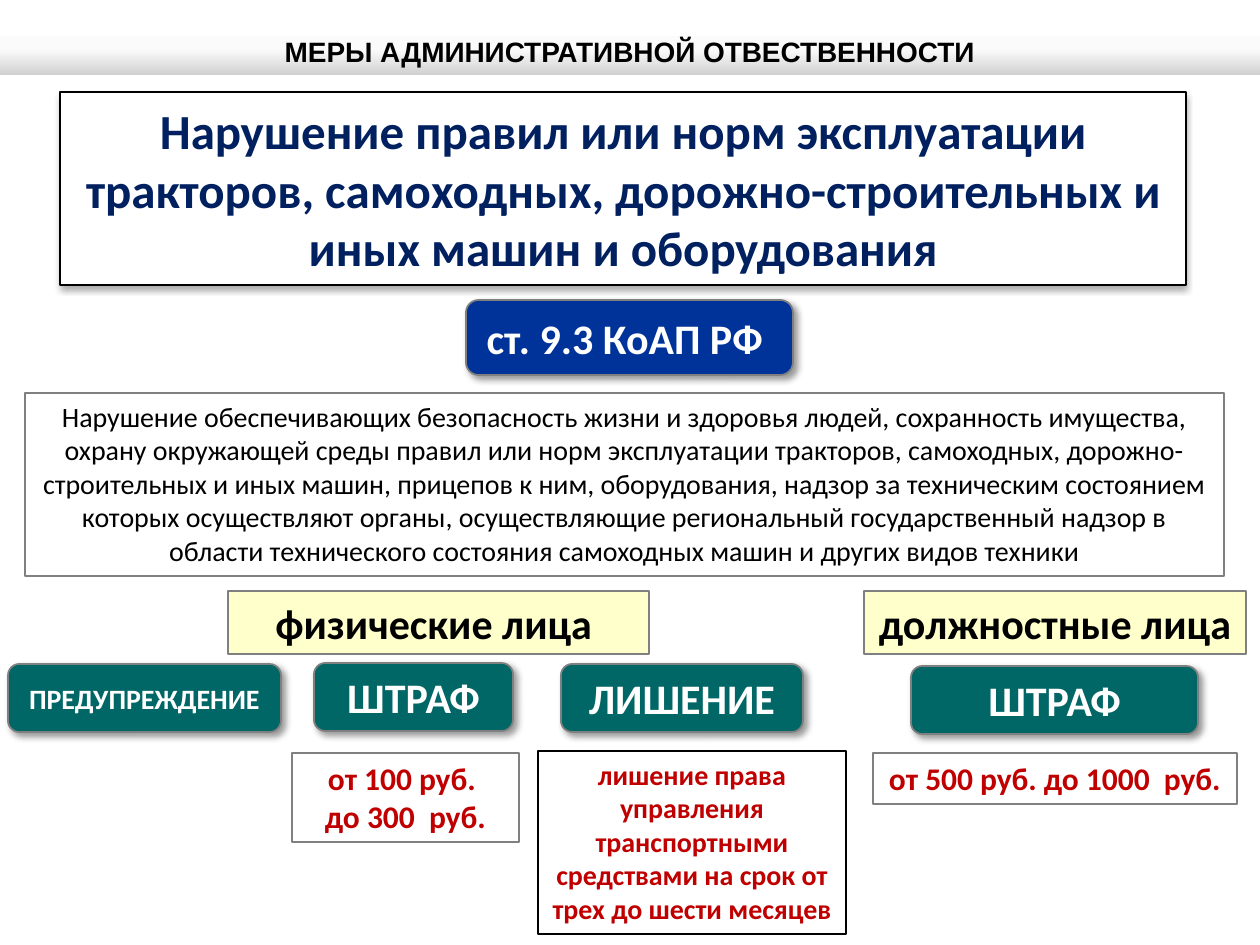
from lxml import etree
from pptx import Presentation
from pptx import util as u
from pptx.dml.color import RGBColor
from pptx.enum import shapes, text
from pptx.oxml import parse_xml

PX = 914400 / 126
NS = 'xmlns:a="http://schemas.openxmlformats.org/drawingml/2006/main"'

# Kinds of box: look and text format
BUTTON = dict(rounded=True, line="808080", line_pt=1, size=24, bold=True, color="FFFFFF",
              middle=True, shadow=(40, 4, 3, 45))
GREEN = BUTTON | dict(fill="006666")
WHO = dict(fill="FFFFCC", line="808080", size=24, bold=True)
PENALTY = dict(line="808080", size=18, bold=True, color="C00000")
BAR = dict(gradient=((0, "FFFFFF"), (50, "FBFBFB"), (100, "D1D1D1")), size=16, bold=True,
           font="Arial", spacing=1.15)
OFFENCE = dict(fill="FFFFFF", line="000000", size=28, bold=True, color="002060", middle=True,
               margins=(0, 8), shadow=(32, 3.5, 2.2, 90))
ARTICLE = BUTTON | dict(fill="003399")
DETAIL = dict(fill="FFFFFF", line="808080", size=16)

# (left, top, width, height) in px, kind, paragraphs
BOXES = [
    ((0, 23, 1260, 52), BAR, ["МЕРЫ АДМИНИСТРАТИВНОЙ ОТВЕСТВЕННОСТИ"]),
    ((60, 92, 1126, 193), OFFENCE,
     ["Нарушение правил или норм эксплуатации тракторов, самоходных, "
      "дорожно-строительных и иных машин и оборудования"]),
    ((466, 300, 327, 75), ARTICLE, ["ст. 9.3 КоАП РФ "]),
    ((25, 393, 1199, 183), DETAIL,
     ["Нарушение обеспечивающих безопасность жизни и здоровья людей, сохранность "
      "имущества, охрану окружающей среды правил или норм эксплуатации тракторов, "
      "самоходных, дорожно-строительных и иных машин, прицепов к ним, оборудования, "
      "надзор за техническим состоянием которых осуществляют органы, осуществляющие "
      "региональный государственный надзор в области технического состояния "
      "самоходных машин и других видов техники"]),
    # Persons
    ((228, 591, 421, 63), WHO, ["физические лица "]),
    ((864, 591, 382, 63), WHO, ["должностные лица "]),
    # Measures
    ((8, 664, 273, 68), GREEN | dict(size=16), ["ПРЕДУПРЕЖДЕНИЕ"]),
    ((314, 663, 199, 68), GREEN, ["ШТРАФ"]),
    ((561, 664, 242, 68), GREEN, ["ЛИШЕНИЕ"]),
    ((911, 666, 287, 68), GREEN, ["ШТРАФ"]),
    # Penalties
    ((292, 753, 227, 89), PENALTY, ["от 100 руб. ", "до 300  руб."]),
    ((538, 751, 308, 183), PENALTY | dict(line="000000", size=16),
     ["лишение права управления транспортными средствами на срок от трех до шести месяцев"]),
    ((873, 753, 364, 51), PENALTY, ["от 500 руб. до 1000  руб."]),
]


def rgb(value):
    return RGBColor.from_string(value)


def px(n):
    return u.Emu(round(n * PX))


def set_gradient(sp, stops):
    sp.fill.gradient()
    sp.fill.gradient_angle = 270
    gs_list = sp.fill._fill._gradFill.find("{*}gsLst")
    for gs in list(gs_list):
        gs_list.remove(gs)
    for pos, color in stops:
        gs_list.append(parse_xml(
            f'<a:gs {NS} pos="{pos * 1000}"><a:srgbClr val="{color}"/></a:gs>'))


def set_shadow(sp, alpha, blur, dist, angle):
    effects = sp._element.spPr.find("{*}effectLst")
    effects.append(etree.fromstring(
        f'<a:outerShdw {NS} blurRad="{u.Pt(blur)}" dist="{u.Pt(dist)}" '
        f'dir="{angle * 60000}" algn="tl" rotWithShape="0">'
        f'<a:srgbClr val="000000"><a:alpha val="{alpha * 1000}"/></a:srgbClr></a:outerShdw>'))


def add_box(s, place, look, paragraphs):
    kind = shapes.MSO_SHAPE.ROUNDED_RECTANGLE if look.get("rounded") else shapes.MSO_SHAPE.RECTANGLE
    sp = s.shapes.add_shape(kind, *map(px, place))
    sp.shadow.inherit = False

    # Fill, line and shadow
    if "gradient" in look:
        set_gradient(sp, look["gradient"])
    elif "fill" in look:
        sp.fill.solid()
        sp.fill.fore_color.rgb = rgb(look["fill"])
    else:
        sp.fill.background()
    if "line" in look:
        sp.line.color.rgb = rgb(look["line"])
        sp.line.width = u.Pt(look.get("line_pt", 0.75))
    else:
        sp.line.fill.background()
    if "shadow" in look:
        set_shadow(sp, *look["shadow"])

    # Text
    tf = sp.text_frame
    side, end = map(px, look.get("margins", (12.6, 6.3)))
    anchor = text.MSO_ANCHOR.MIDDLE if look.get("middle") else text.MSO_ANCHOR.TOP
    frame = dict(word_wrap=True, vertical_anchor=anchor, margin_left=side, margin_right=side,
                 margin_top=end, margin_bottom=end)
    for name, value in frame.items():
        setattr(tf, name, value)
    font = dict(name=look.get("font", "Calibri"), size=u.Pt(look["size"]),
                bold=look.get("bold", False))
    for i, line in enumerate(paragraphs):
        p = tf.add_paragraph() if i else tf.paragraphs[0]
        p.alignment = text.PP_ALIGN.CENTER
        p.line_spacing = look.get("spacing")
        r = p.add_run()
        r.text = line
        for name, value in font.items():
            setattr(r.font, name, value)
        r.font.color.rgb = rgb(look.get("color", "000000"))


def main():
    prs = Presentation()
    prs.slide_width, prs.slide_height = px(1260), px(945)
    s = prs.slides.add_slide(prs.slide_layouts[6])
    for box in BOXES:
        add_box(s, *box)
    prs.save("out.pptx")


if __name__ == "__main__":
    main()
